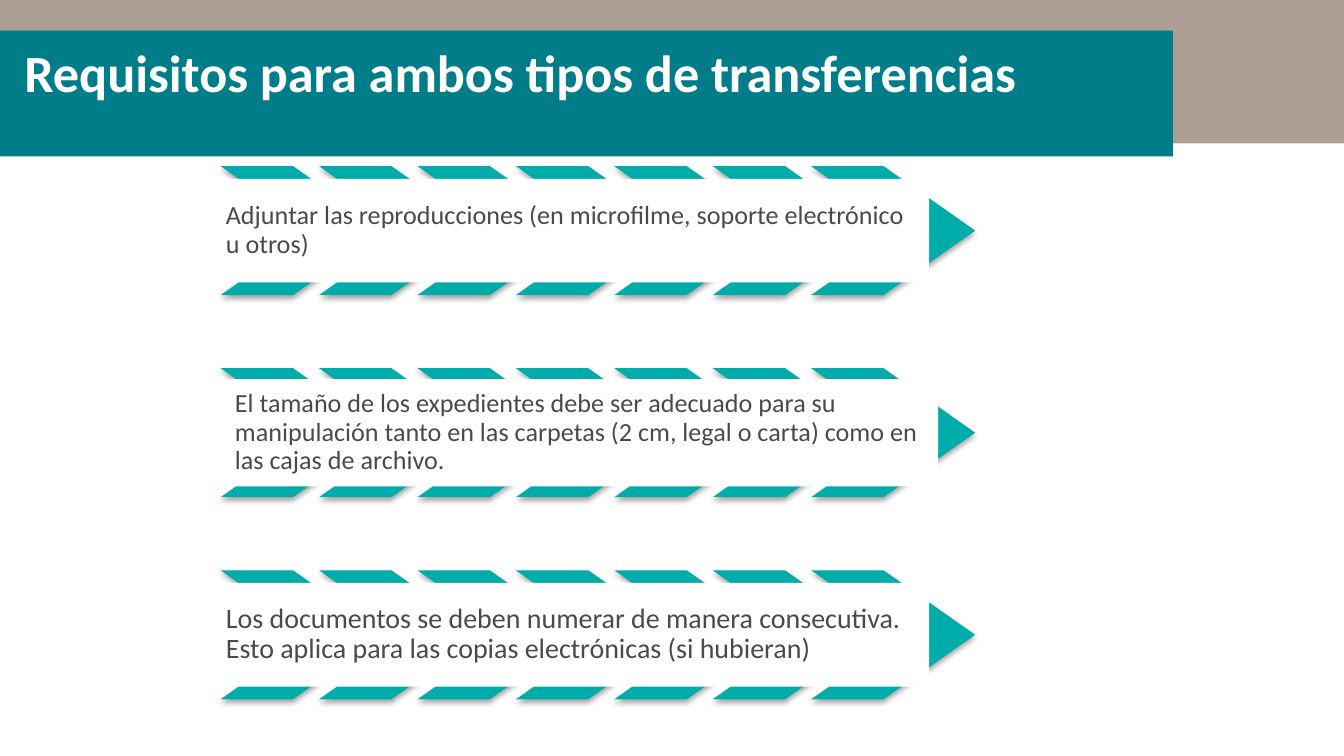
"""Build the slide listing the requirements shared by both kinds of transfer."""
from dataclasses import dataclass

from lxml import etree
from pptx import Presentation
from pptx.dml.color import RGBColor
from pptx.enum.shapes import MSO_SHAPE
from pptx.enum.text import MSO_ANCHOR, MSO_AUTO_SIZE, PP_ALIGN
from pptx.oxml.ns import qn
from pptx.util import Cm, Pt

RECTANGLE, CHEVRON = MSO_SHAPE.RECTANGLE, MSO_SHAPE.CHEVRON
MIDDLE, NO_AUTOFIT = MSO_ANCHOR.MIDDLE, MSO_AUTO_SIZE.NONE
LEFT, CENTER = PP_ALIGN.LEFT, PP_ALIGN.CENTER


@dataclass(frozen=True)
class Theme:
    font: str = "Calibri"
    taupe: str = "AD9E93"
    petrol: str = "007D89"
    teal: str = "00ACA9"
    white: str = "FFFFFF"
    ink: str = "4A4A49"
    title_size: int = 28


THEME = Theme()
TITLE = "Requisitos para ambos tipos de transferencias"
TITLE_BOX = (-1.6, 0.15, 22.86, 2.39)
BANDS = [
    (THEME.taupe, (0, 0, 25.4, 2.71)),
    (THEME.petrol, (0, 0.58, 22.17, 2.38)),
]
REQUIREMENTS = [
    {"text": "Adjuntar las reproducciones (en microfilme, soporte electrónico u otros)",
     "size": 14, "indent": 0, "height": 1.96},
    {"text": "El tamaño de los expedientes debe ser adecuado para su manipulación tanto "
             "en las carpetas (2 cm, legal o carta) como en las cajas de archivo.",
     "size": 14, "indent": 0.17, "height": 2.03},
    {"text": "Los documentos se deben numerar de manera consecutiva. "
             "Esto aplica para las copias electrónicas (si hubieran)",
     "size": 15, "indent": 0, "height": 1.96},
]
ROW_LEFT, ROW_TOP, ROW_PITCH = 4.17, 3.14, 3.82
CHEVRON_COUNT, CHEVRON_PITCH = 7, 1.86
CHEVRON_WIDTH, CHEVRON_HEIGHT, CHEVRON_POINT = 3.1, 2.44, 0.71
PANEL_WIDTH, PANEL_INSET = 13.39, 0.1


def add_block(page, kind, bounds, color):
    shape = page.shapes.add_shape(kind, *map(Cm, bounds))
    shape.fill.solid()
    shape.fill.fore_color.rgb = RGBColor.from_string(color)
    shape.line.fill.background()
    shape.shadow.inherit = False
    return shape


def add_shadow(shape):
    effects = shape._element.spPr.find(qn("a:effectLst"))
    shadow = etree.SubElement(effects, qn("a:outerShdw"), blurRad=str(Pt(3.1)),
                              dist=str(Pt(1.8)), dir="5400000", rotWithShape="0")
    color = etree.SubElement(shadow, qn("a:srgbClr"), val="000000")
    etree.SubElement(color, qn("a:alpha"), val="35000")


def write(box, text, size, color, align, bold=False):
    frame = box.text_frame
    frame.text = text
    frame.word_wrap = True
    frame.auto_size = NO_AUTOFIT
    frame.vertical_anchor = MIDDLE
    para = frame.paragraphs[0]
    para.alignment = align
    for span in para.runs:
        span.font.name = THEME.font
        span.font.size = Pt(size)
        span.font.bold = bold
        span.font.color.rgb = RGBColor.from_string(color)
    return frame


def add_title(page):
    title = page.shapes.title
    for color, bounds in BANDS:
        band = add_block(page, RECTANGLE, bounds, color)
        title._element.addprevious(band._element)
    title.left, title.top, title.width, title.height = map(Cm, TITLE_BOX)
    write(title, TITLE, THEME.title_size, THEME.white, CENTER, bold=True)


def add_requirement(page, row, item):
    top = ROW_TOP + row * ROW_PITCH
    for column in range(CHEVRON_COUNT):
        left = ROW_LEFT + column * CHEVRON_PITCH
        chevron = add_block(page, CHEVRON, (left, top, CHEVRON_WIDTH, CHEVRON_HEIGHT), THEME.teal)
        chevron.adjustments[0] = CHEVRON_POINT
        add_shadow(chevron)
    panel_top = top + (CHEVRON_HEIGHT - item["height"]) / 2
    bounds = (ROW_LEFT + item["indent"], panel_top, PANEL_WIDTH, item["height"])
    panel = add_block(page, RECTANGLE, bounds, THEME.white)
    frame = write(panel, item["text"], item["size"], THEME.ink, LEFT)
    frame.margin_left = frame.margin_right = Cm(PANEL_INSET)
    frame.margin_top = frame.margin_bottom = Cm(PANEL_INSET)
    frame.paragraphs[0].line_spacing = 0.9


def main():
    deck = Presentation()
    deck.slide_width, deck.slide_height = Cm(25.4), Cm(14.29)
    page = deck.slides.add_slide(deck.slide_layouts[5])
    add_title(page)
    for row, item in enumerate(REQUIREMENTS):
        add_requirement(page, row, item)
    deck.save("out.pptx")


if __name__ == "__main__":
    main()
